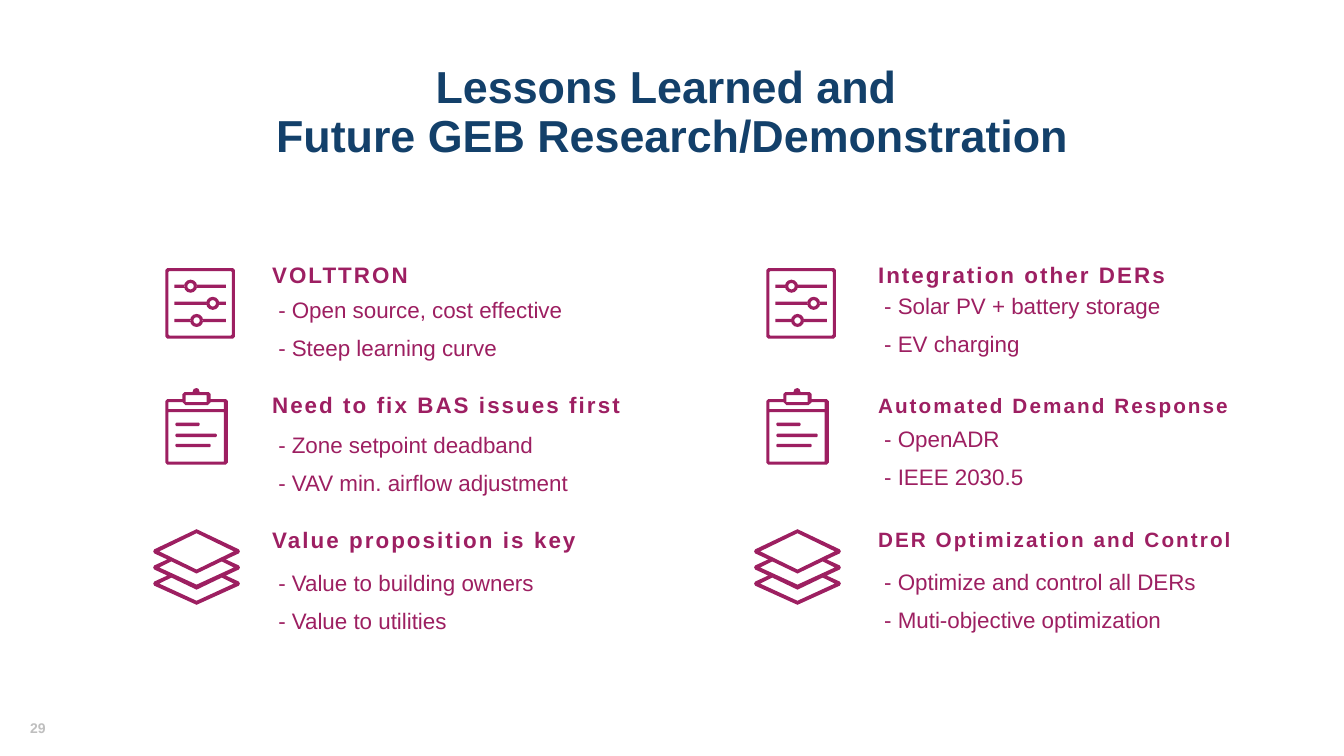
from math import cos, pi, sin

from pptx import Presentation
from pptx.dml.color import RGBColor
from pptx.enum.text import MSO_ANCHOR, PP_ALIGN
from pptx.util import Inches, Pt

COLORS = {"navy": "13406A", "berry": "9D1F61", "heading": "9D1F62",
          "gray": "BFBFBF"}


def rect(left, top, right, bottom, cut=0):
    """Rectangle outline, with chamfered corners if cut is given."""
    if not cut:
        return [(left, top), (right, top), (right, bottom), (left, bottom)]
    return [(left + cut, top), (right - cut, top),
            (right, top + cut), (right, bottom - cut),
            (right - cut, bottom), (left + cut, bottom),
            (left, bottom - cut), (left, top + cut)]


def circle(x, y, radius, steps=12):
    return [(x + radius * cos(2 * pi * i / steps), y + radius * sin(2 * pi * i / steps))
            for i in range(steps)]


class SlideBuilder:
    font_name = "Arial"

    def __init__(self, slide):
        self.slide = slide

    def color(self, name):
        return RGBColor.from_string(COLORS[name])

    def text(self, box, lines, size, color, bold=False, tracking=0,
             align=PP_ALIGN.LEFT, anchor=MSO_ANCHOR.TOP, wrap=True, leading=0.9):
        frame = self.slide.shapes.add_textbox(*map(Inches, box)).text_frame
        for name, value in {"word_wrap": wrap, "vertical_anchor": anchor}.items():
            setattr(frame, name, value)
        for index, line in enumerate(lines):
            paragraph = frame.paragraphs[0] if index == 0 else frame.add_paragraph()
            paragraph.text = line
            layout = {"alignment": align, "line_spacing": leading,
                      "space_before": Pt(10 if index else 0)}
            for name, value in layout.items():
                setattr(paragraph, name, value)
            for run in paragraph.runs:
                style = {"name": self.font_name, "size": Pt(size), "bold": bold}
                for name, value in style.items():
                    setattr(run.font, name, value)
                run.font.color.rgb = self.color(color)
                if tracking:
                    run._r.get_or_add_rPr().set("spc", str(int(tracking * 100)))

    def icon(self, left, contours):
        """One filled outline; a contour inside another cuts a hole."""
        builder = None
        for contour in contours:
            start, *rest = [(Inches(left + x), Inches(y)) for x, y in contour]
            if builder is None:
                builder = self.slide.shapes.build_freeform(*start)
            else:
                builder.move_to(*start)
            builder.add_line_segments(rest, close=True)
        shape = builder.convert_to_shape()
        shape.shadow.inherit = False
        shape.fill.solid()
        shape.fill.fore_color.rgb = self.color("berry")
        shape.line.fill.background()

    # Icons: left is the left edge of the icon column
    def sliders(self, left):
        contours = [rect(0.13, 2.66, 0.82, 3.36, 0.02),
                    rect(0.16, 2.69, 0.79, 3.33, 0.01)]
        for y, knob in ((2.84, 0.38), (3.01, 0.6), (3.18, 0.44)):
            contours += [rect(0.22, y - 0.016, knob - 0.06, y + 0.016),
                         circle(knob, y, 0.065), circle(knob, y, 0.032),
                         rect(knob + 0.06, y - 0.016, 0.73, y + 0.016)]
        self.icon(left, contours)

    def clipboard(self, left):
        silhouette = [(0.15, 3.96), (0.3, 3.96), (0.3, 3.91), (0.32, 3.89),
                      (0.4, 3.89), (0.41, 3.86), (0.44, 3.85), (0.46, 3.86),
                      (0.47, 3.89), (0.56, 3.89), (0.58, 3.91), (0.58, 3.96),
                      (0.73, 3.96), (0.75, 3.98), (0.75, 4.59), (0.73, 4.61),
                      (0.15, 4.61), (0.13, 4.59), (0.13, 3.98)]
        header = [(0.16, 4.06), (0.16, 3.99), (0.3, 3.99), (0.33, 4.02),
                  (0.55, 4.02), (0.58, 3.99), (0.71, 3.99), (0.71, 4.06)]
        notes = [rect(0.23, y - 0.017, right, y + 0.017, 0.01)
                 for y, right in ((4.21, 0.47), (4.32, 0.64), (4.42, 0.58))]
        self.icon(left, [silhouette, header, rect(0.16, 4.09, 0.71, 4.58),
                         rect(0.33, 3.92, 0.54, 3.99)] + notes)

    def layers(self, left):
        middle = 0.44
        right_edge = []
        for y in (5.47, 5.63, 5.79):
            right_edge += [(0.86, y - 0.02), (0.87, y), (0.86, y + 0.02)]
            if y < 5.79:
                right_edge.append((0.73, y + 0.08))
        left_edge = [(2 * middle - x, y) for x, y in reversed(right_edge)]
        silhouette = [(middle, 5.25), *right_edge, (middle, 6), *left_edge]
        contours = [silhouette, [(0.07, 5.47), (middle, 5.29), (0.81, 5.47),
                                 (middle, 5.65)]]
        for y in (5.63, 5.79):
            contours.append([(0.07, y), (0.19, y - 0.06), (middle, y + 0.06),
                             (0.69, y - 0.06), (0.81, y), (middle, y + 0.17)])
        self.icon(left, contours)


# Each column: icon left, text left, then topics as
# (heading, heading size, bullet top, bullets)
COLUMNS = [
    (1.51, 2.6, [
        ("VOLTTRON", 16, 2.92,
         [" - Open source, cost effective", " - Steep learning curve"]),
        ("Need to fix BAS issues first", 16, 4.26,
         [" - Zone setpoint deadband", " - VAV min. airflow adjustment"]),
        ("Value proposition is key", 16, 5.63,
         [" - Value to building owners", " - Value to utilities"]),
    ]),
    (7.47, 8.61, [
        ("Integration other DERs", 16, 2.88,
         [" - Solar PV + battery storage", " - EV charging"]),
        ("Automated Demand Response", 14.8, 4.2,
         [" - OpenADR", " - IEEE 2030.5"]),
        ("DER Optimization and Control", 14.8, 5.62,
         [" - Optimize and control all DERs", " - Muti-objective optimization"]),
    ]),
]
HEADING_TOPS = (2.56, 3.85, 5.18)


def main():
    deck = Presentation()
    deck.slide_width, deck.slide_height = Inches(13.33), Inches(7.5)
    builder = SlideBuilder(deck.slides.add_slide(deck.slide_layouts[6]))

    # Title and page number
    builder.text((0.92, 0.4, 11.5, 1.45),
                 ["Lessons Learned and \vFuture GEB Research/Demonstration"],
                 32, "navy", bold=True, align=PP_ALIGN.CENTER,
                 anchor=MSO_ANCHOR.MIDDLE)
    builder.text((0.2, 7.09, 0.37, 0.27), ["29"], 10, "gray", bold=True,
                 wrap=False, leading=1.0)

    # Two columns of topics
    for icon_left, text_left, topics in COLUMNS:
        for draw_icon in (builder.sliders, builder.clipboard, builder.layers):
            draw_icon(icon_left)
        for top, (heading, size, bullet_top, bullets) in zip(HEADING_TOPS, topics):
            builder.text((text_left, top, 3.81, 0.37), [heading], size, "heading",
                         bold=True, tracking=1.5, anchor=MSO_ANCHOR.MIDDLE)
            builder.text((text_left, bullet_top, 3.81, 0.83), bullets, 16, "berry")

    deck.save("out.pptx")


if __name__ == "__main__":
    main()
